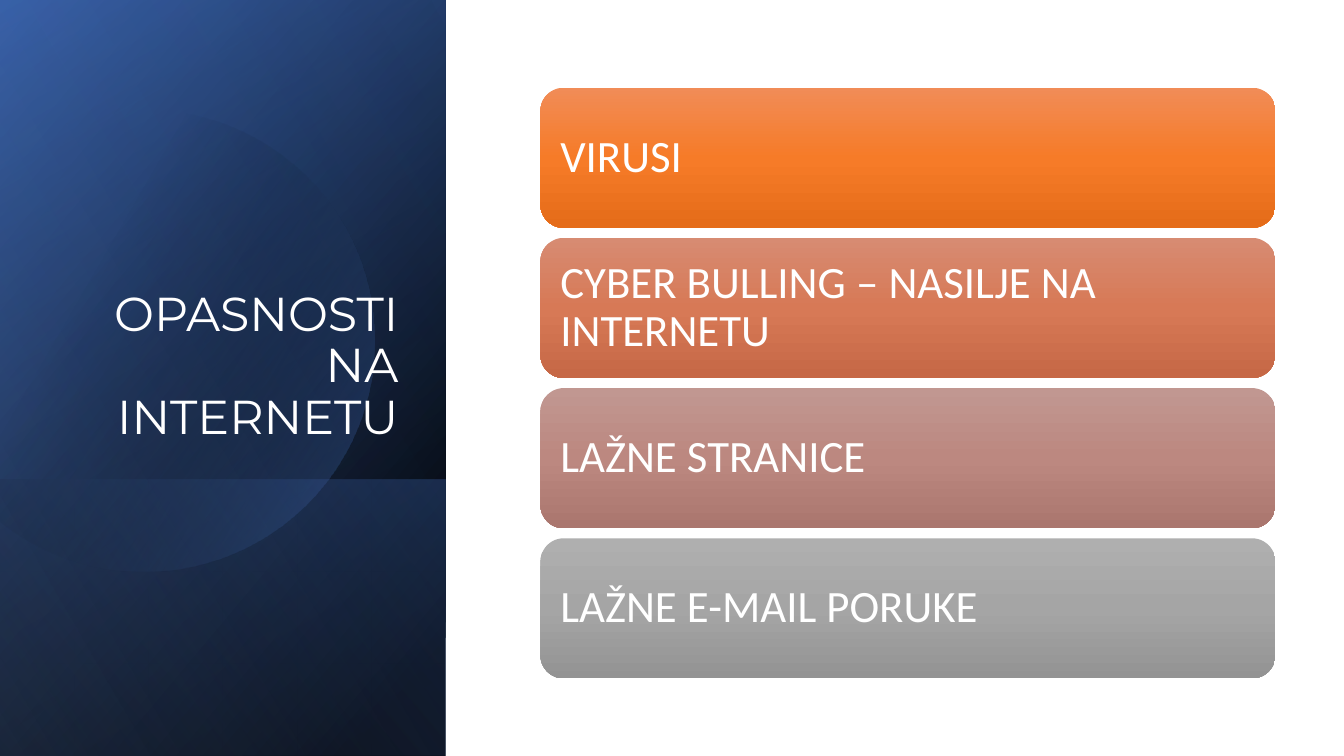
from dataclasses import dataclass
from math import acos, cos, sin

from lxml.etree import SubElement
from pptx import Presentation
from pptx.dml.color import RGBColor
from pptx.enum.shapes import MSO_SHAPE
from pptx.enum.text import MSO_ANCHOR, PP_ALIGN
from pptx.oxml.ns import qn
from pptx.util import Pt

EMU_PER_PX = 9144


@dataclass(frozen=True)
class Theme:
    black: str = "000000"
    navy: str = "2F5597"
    blue: str = "4472C4"
    pale: str = "8FAADC"
    white: str = "FFFFFF"
    title_font: str = "Montserrat"
    body_font: str = "Calibri"
    title_size: int = 34
    body_size: int = 32
    cards: tuple = (
        ("F18C57", "F67B28", "E56C19"),
        ("D78B72", "D77956", "C66846"),
        ("C19791", "BC8880", "AA766E"),
        ("AFAFAF", "A5A5A5", "939393"),
    )


def px(value):
    return round(value * EMU_PER_PX)


class SlideBuilder:
    def __init__(self, page, theme):
        self.page = page
        self.theme = theme

    def paint(self, shape, stops, angle):
        shape.shadow.inherit = False
        shape.line.fill.background()
        shape.fill.gradient()
        shape.fill.gradient_angle = -angle % 360
        stop_list = next(shape._element.spPr.iter(qn("a:gsLst")))
        for stop in list(stop_list):
            stop_list.remove(stop)
        for position, color, opacity in stops:
            stop = SubElement(stop_list, qn("a:gs"), pos=str(position * 1000))
            tint = SubElement(stop, qn("a:srgbClr"), val=color)
            if opacity < 100:
                SubElement(tint, qn("a:alpha"), val=str(opacity * 1000))

    def panel(self, left, top, width, height, stops, angle):
        shift = (height - width) / 2
        box = self.page.shapes.add_shape(
            MSO_SHAPE.RECTANGLE, px(left - shift), px(top + shift), px(height), px(width))
        box.rotation = 90
        box._element.spPr.find(qn("a:xfrm")).set("flipH", "1")
        self.paint(box, stops, angle)

    def cut_circle(self, center_x, center_y, radius, stops, angle):
        reach = acos(-center_x / radius)
        turns = [reach * (step / 60 - 1) for step in range(121)]
        points = [(px(center_x + radius * cos(turn)), px(center_y + radius * sin(turn)))
                  for turn in turns]
        outline = self.page.shapes.build_freeform(*points[0])
        outline.add_line_segments(points[1:], close=True)
        self.paint(outline.convert_to_shape(), stops, angle)

    def set_text(self, box, text, font, size, align, anchor):
        frame = box.text_frame
        frame.text = text
        frame.word_wrap = True
        frame.vertical_anchor = anchor
        para = frame.paragraphs[0]
        para.alignment = align
        para.line_spacing = 0.9
        for span in para.runs:
            span.font.name = font
            span.font.size = Pt(size)
            span.font.color.rgb = RGBColor.from_string(self.theme.white)

    def title(self, left, top, width, height, text):
        box = self.page.shapes.add_textbox(px(left), px(top), px(width), px(height))
        self.set_text(box, text, self.theme.title_font, self.theme.title_size,
                      PP_ALIGN.RIGHT, MSO_ANCHOR.BOTTOM)

    def card(self, left, top, width, height, text, colors):
        box = self.page.shapes.add_shape(
            MSO_SHAPE.ROUNDED_RECTANGLE, px(left), px(top), px(width), px(height))
        self.paint(box, [(50 * i, color, 100) for i, color in enumerate(colors)], 90)
        frame = box.text_frame
        frame.margin_left = frame.margin_right = px(13)
        frame.margin_top = frame.margin_bottom = px(13)
        self.set_text(box, text, self.theme.body_font, self.theme.body_size,
                      PP_ALIGN.LEFT, MSO_ANCHOR.MIDDLE)


def main():
    deck = Presentation()
    deck.slide_width, deck.slide_height = px(1333), px(750)
    theme = Theme()
    builder = SlideBuilder(deck.slides.add_slide(deck.slide_layouts[6]), theme)

    sidebar = (0, 0, 442, 750)
    builder.panel(*sidebar, [(8, theme.black, 100), (100, theme.navy, 100)], 50)
    builder.panel(*sidebar, [(0, theme.black, 0), (99, theme.blue, 46)], 30)
    builder.panel(0, 476, 442, 274, [(2, theme.blue, 29), (100, theme.black, 30)], 130)
    builder.cut_circle(142, 338, 229, [(29, theme.black, 0), (100, theme.blue, 43)], 30)
    builder.panel(*sidebar, [(0, theme.black, 0), (99, theme.pale, 11)], 120)
    builder.title(64, 184, 341, 262, "OPASNOSTI NA INTERNETU")

    dangers = ("VIRUSI", "CYBER BULLING – NASILJE NA INTERNETU",
               "LAŽNE STRANICE", "LAŽNE E-MAIL PORUKE")
    for row, (danger, colors) in enumerate(zip(dangers, theme.cards)):
        builder.card(536, 87 + 149 * row, 729, 139, danger, colors)

    deck.save("out.pptx")


if __name__ == "__main__":
    main()
